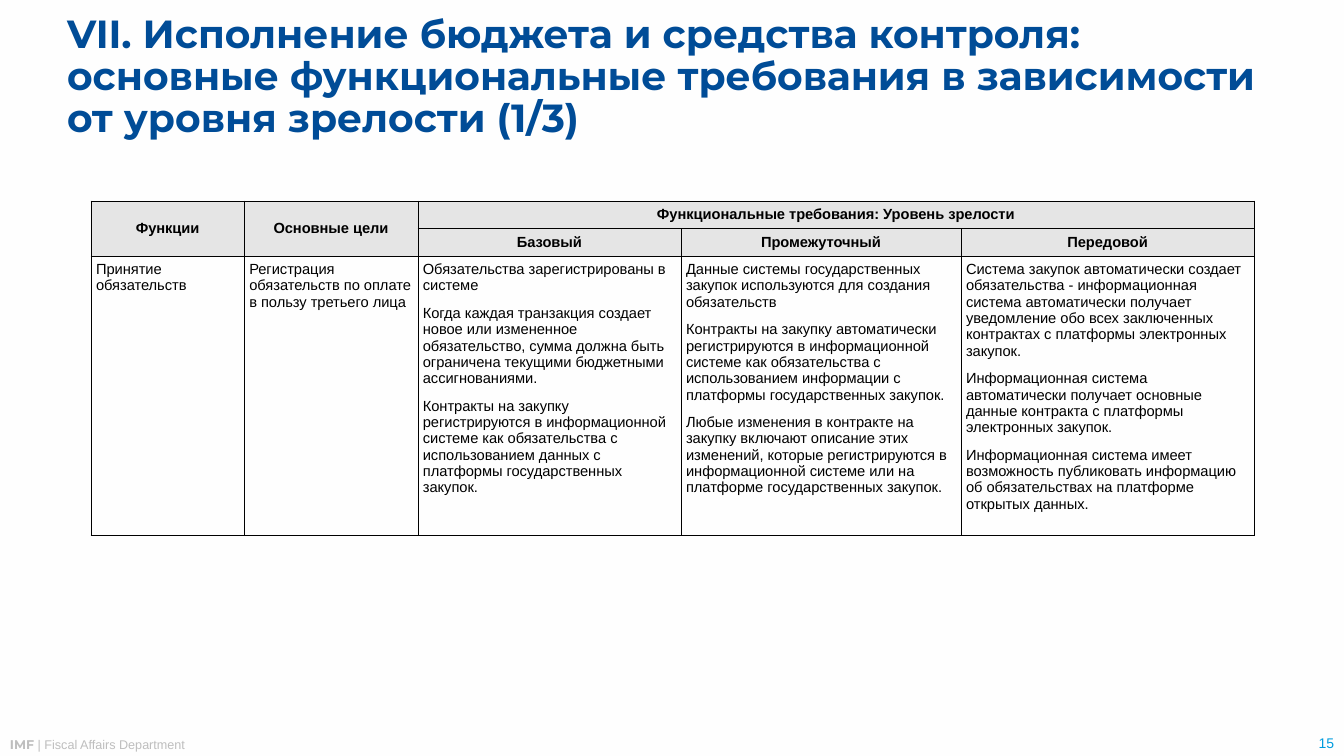
from lxml import etree
from pptx import Presentation
from pptx import util as u
from pptx.dml.color import RGBColor
from pptx.enum import text
from pptx.oxml import ns

Pt = u.Pt
NAVY = RGBColor(0x00, 0x4C, 0x97)
SKY = RGBColor(0x00, 0x9C, 0xDE)
SILVER = RGBColor(0xBE, 0xBE, 0xBE)
PALE = RGBColor(0xE5, 0xE5, 0xE5)
BLACK = RGBColor(0, 0, 0)
PAPER = RGBColor(0xFE, 0xFE, 0xFE)
SANS, HEAD = "Arial", "Montserrat"
LEFT, RIGHT, CENTER = (text.PP_ALIGN.LEFT, text.PP_ALIGN.RIGHT,
                       text.PP_ALIGN.CENTER)
TOP, MIDDLE, BOTTOM = (text.MSO_ANCHOR.TOP, text.MSO_ANCHOR.MIDDLE,
                       text.MSO_ANCHOR.BOTTOM)

TITLE = ("VII. Исполнение бюджета и средства контроля: основные "
         "функциональные требования в зависимости от уровня зрелости (1/3)")
WIDTHS = [109.5, 124, 188, 200, 209.5]
HEIGHTS = [19, 19, 187]
GROUPS = ["Функции", "Основные цели",
          "Функциональные требования: Уровень зрелости"]
LEVELS = ["Базовый", "Промежуточный", "Передовой"]
BODY = [
    ["Принятие обязательств"],
    ["Регистрация обязательств по оплате в пользу третьего лица"],
    ["Обязательства зарегистрированы в системе",
     "Когда каждая транзакция создает новое или измененное обязательство, "
     "сумма должна быть ограничена текущими бюджетными ассигнованиями.",
     "Контракты на закупку регистрируются в информационной системе как "
     "обязательства с использованием данных с платформы государственных "
     "закупок."],
    ["Данные системы государственных закупок используются для создания "
     "обязательств",
     "Контракты на закупку автоматически регистрируются в информационной "
     "системе как обязательства с использованием информации с платформы "
     "государственных закупок.",
     "Любые изменения в контракте на закупку включают описание этих "
     "изменений, которые регистрируются в информационной системе или на "
     "платформе государственных закупок."],
    ["Система закупок автоматически создает обязательства - информационная "
     "система автоматически получает уведомление обо всех заключенных "
     "контрактах с платформы электронных закупок.",
     "Информационная система автоматически получает основные данные "
     "контракта с платформы электронных закупок.",
     "Информационная система имеет возможность публиковать информацию об "
     "обязательствах на платформе открытых данных."],
]


def style(run, size, color, face=SANS, bold=False):
    font = run.font
    font.size, font.name, font.bold = Pt(size), face, bold
    font.color.rgb = color


def add_text(slide, box, words, size, color, face=SANS, bold=False,
             align=LEFT, anchor=TOP):
    frame = slide.shapes.add_textbox(*map(Pt, box)).text_frame
    frame.word_wrap = True
    frame.vertical_anchor = anchor
    frame.text = words
    para = frame.paragraphs[0]
    para.alignment = align
    style(para.runs[0], size, color, face, bold)
    return frame


def add_border(cell):
    props = cell._tc.get_or_add_tcPr()
    for side in ("a:lnL", "a:lnR", "a:lnT", "a:lnB"):
        line = etree.SubElement(props, ns.qn(side), w=str(Pt(0.5)))
        fill = etree.SubElement(line, ns.qn("a:solidFill"))
        etree.SubElement(fill, ns.qn("a:srgbClr"), val=str(BLACK))


def fill_cell(cell, paras, header=False):
    cell.margin_left = cell.margin_right = Pt(3.6)
    cell.margin_top = cell.margin_bottom = Pt(3.6)
    cell.vertical_anchor = MIDDLE if header else TOP
    if header:
        cell.fill.solid()
        cell.fill.fore_color.rgb = PALE
    cell.text_frame.text = "\n".join(paras)
    for para in cell.text_frame.paragraphs:
        para.alignment = CENTER if header else LEFT
        para.space_after = Pt(8)
        style(para.runs[0], 10.5, BLACK, bold=header)


def add_grid(slide):
    box = (65, 143.5, sum(WIDTHS), sum(HEIGHTS))
    table = slide.shapes.add_table(len(HEIGHTS), len(WIDTHS),
                                   *map(Pt, box)).table
    table.first_row = table.horz_banding = False
    for col, width in zip(table.columns, WIDTHS):
        col.width = Pt(width)
    for row, height in zip(table.rows, HEIGHTS):
        row.height = Pt(height)
    for cell in table.iter_cells():
        add_border(cell)
        cell.fill.background()

    # Two header rows with merged groups
    for col in (0, 1):
        table.cell(0, col).merge(table.cell(1, col))
    table.cell(0, 2).merge(table.cell(0, 4))
    for col, name in enumerate(GROUPS):
        fill_cell(table.cell(0, col), [name], header=True)
    for col, name in enumerate(LEVELS, 2):
        fill_cell(table.cell(1, col), [name], header=True)

    # Requirements
    for col, paras in enumerate(BODY):
        fill_cell(table.cell(2, col), paras)


def main():
    deck = Presentation()
    deck.slide_width, deck.slide_height = Pt(960), Pt(540)
    slide = deck.slides.add_slide(deck.slide_layouts[6])
    slide.background.fill.solid()
    slide.background.fill.fore_color.rgb = PAPER

    # Footer and page number
    foot = add_text(slide, (0, 522.5, 720, 18), "IMF ", 9, SILVER, HEAD, True)
    dept = foot.paragraphs[0].add_run()
    dept.text = "| Fiscal Affairs Department"
    style(dept, 9, SILVER)
    add_text(slide, (865, 521, 95, 19.4), "15", 10, SKY,
             align=RIGHT, anchor=BOTTOM)

    # Title
    title = add_text(slide, (48, 11.5, 864, 88), TITLE, 28, NAVY, HEAD, True,
                     anchor=MIDDLE)
    title.margin_left = title.margin_right = 0
    title.margin_top = title.margin_bottom = 0
    title.paragraphs[0].line_spacing = 0.9

    # Requirements table
    add_grid(slide)
    deck.save("out.pptx")


if __name__ == "__main__":
    main()
